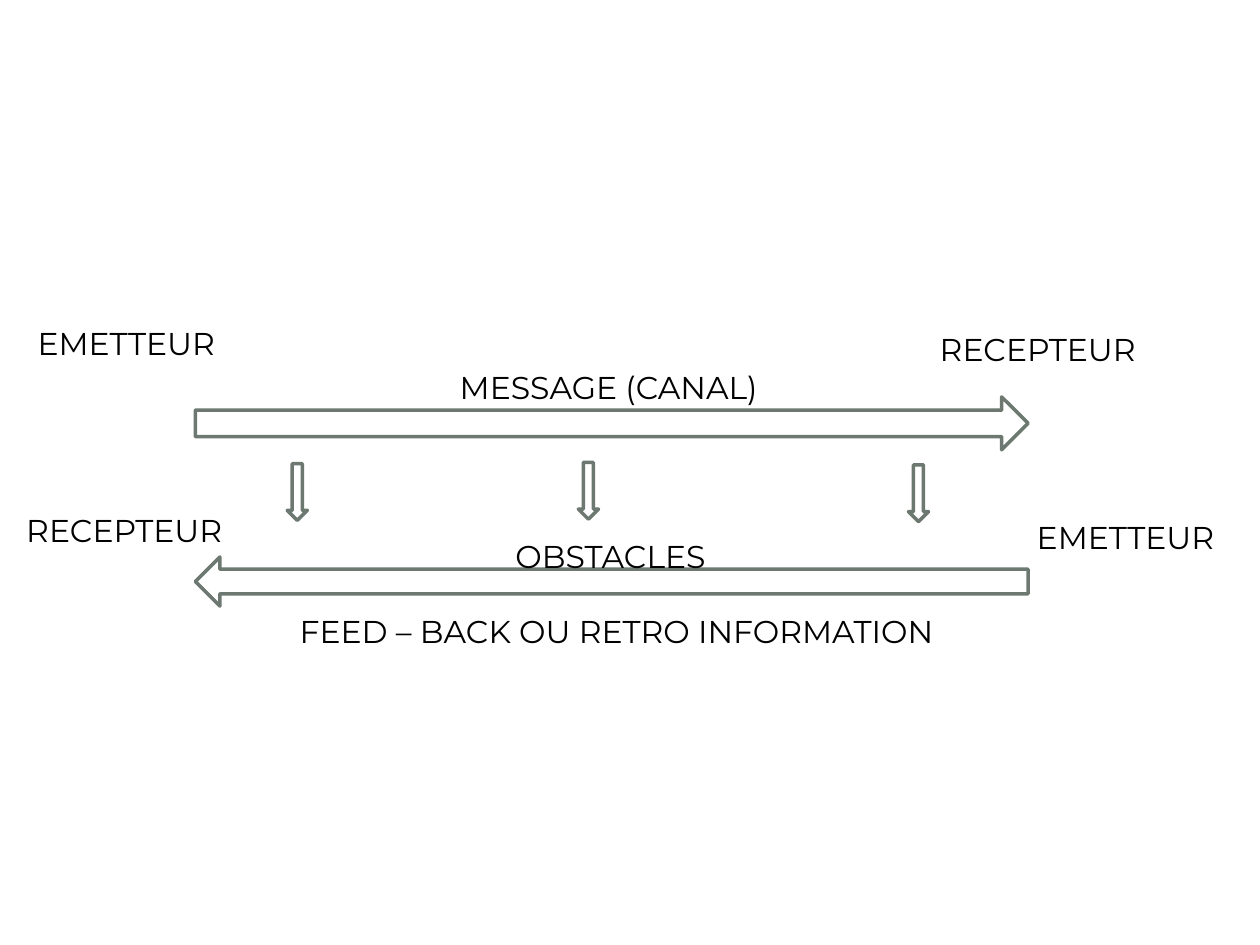
from dataclasses import dataclass

from pptx import Presentation
from pptx import util as u
from pptx.dml.color import RGBColor
from pptx.enum import shapes, text

# The slide is a grid of 100 columns by 75 rows
CELL = u.Inches(0.1)
COLUMNS, ROWS = 100, 75
LABEL_ROWS = 4


@dataclass(frozen=True)
class Theme:
    ink: RGBColor = RGBColor(0, 0, 0)
    outline: RGBColor = RGBColor(0x6D, 0x78, 0x71)
    paper: RGBColor = RGBColor(255, 255, 255)
    font: str = "Montserrat"
    label_size: int = u.Pt(18)
    outline_width: int = u.Pt(2)


THEME = Theme()


@dataclass(frozen=True)
class Box:
    column: float
    row: float
    columns: float
    rows: float

    def inner(self, column, row, columns, rows):
        return Box(self.column + column, self.row + row, columns, rows)

    def lengths(self):
        cells = (self.column, self.row, self.columns, self.rows)
        return [round(cell * CELL) for cell in cells]


def apply_format(target, values):
    for name, value in values.items():
        setattr(target, name, value)


def add_label(slide, box, words, alignment=text.PP_ALIGN.LEFT):
    frame = slide.shapes.add_textbox(*box.lengths()).text_frame
    frame.word_wrap = True
    paragraph = frame.paragraphs[0]
    paragraph.alignment = alignment
    run = paragraph.add_run()
    run.text = words
    apply_format(run.font, {"name": THEME.font, "size": THEME.label_size})
    run.font.color.rgb = THEME.ink


def add_arrow(slide, box, kind):
    shape = slide.shapes.add_shape(kind, *box.lengths())
    shape.shadow.inherit = False
    shape.fill.solid()
    shape.fill.fore_color.rgb = THEME.paper
    shape.line.color.rgb = THEME.outline
    shape.line.width = THEME.outline_width


def add_message(slide, box):
    """Sender to receiver, with the channel above the arrow."""
    add_arrow(slide, box.inner(15.5, 6.3, 66.1, 4.2),
              shapes.MSO_SHAPE.RIGHT_ARROW)
    add_label(slide, box.inner(2, 0, 18, LABEL_ROWS), "EMETTEUR")
    add_label(slide, box.inner(73.6, 0.5, 23.2, LABEL_ROWS), "RECEPTEUR")
    add_label(slide, box.inner(35.5, 3.5, 30.9, LABEL_ROWS), "MESSAGE (CANAL)")


def add_feedback(slide, box):
    """Receiver back to sender, with the caption below the arrow."""
    add_arrow(slide, box.inner(15.5, 4.1, 66.1, 3.9),
              shapes.MSO_SHAPE.LEFT_ARROW)
    add_label(slide, box.inner(1.1, 0, 23.2, LABEL_ROWS), "RECEPTEUR")
    add_label(slide, box.inner(81.3, 0.5, 18, LABEL_ROWS), "EMETTEUR")
    add_label(slide, box.inner(22.8, 8, 56.2, LABEL_ROWS),
              "FEED – BACK OU RETRO INFORMATION")


def add_obstacles(slide, box):
    """Three small arrows pointing down to the obstacles."""
    for column, row in ((22.8, 0.1), (45.9, 0), (72.1, 0.2)):
        add_arrow(slide, box.inner(column, row, 1.6, 4.5),
                  shapes.MSO_SHAPE.DOWN_ARROW)
    add_label(slide, box.inner(33, 5.4, 30.9, LABEL_ROWS), "OBSTACLES",
              text.PP_ALIGN.CENTER)


def main():
    presentation = Presentation()
    apply_format(presentation, {"slide_width": COLUMNS * CELL,
                                "slide_height": ROWS * CELL})
    slide = presentation.slides.add_slide(presentation.slide_layouts[6])
    slide.background.fill.solid()
    slide.background.fill.fore_color.rgb = THEME.paper

    # Bands of the diagram; the obstacles lie over the feedback arrow
    add_message(slide, Box(0, 25.2, COLUMNS, 10.5))
    add_feedback(slide, Box(0, 40.1, COLUMNS, 12))
    add_obstacles(slide, Box(0, 36.7, COLUMNS, 9.4))
    presentation.save("out.pptx")


if __name__ == "__main__":
    main()
